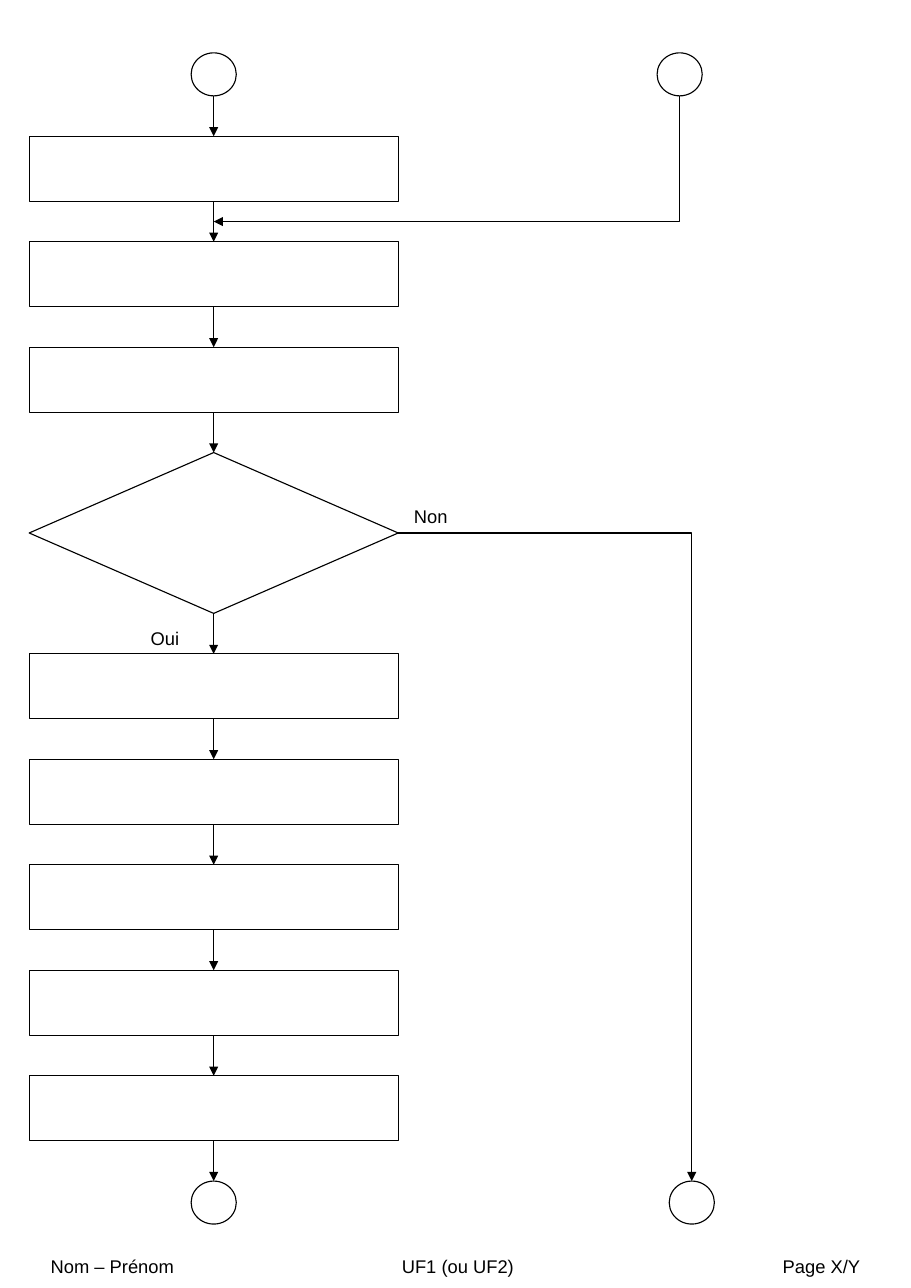
from lxml import etree
from pptx import Presentation
from pptx.dml.color import RGBColor
from pptx.enum.shapes import MSO_CONNECTOR, MSO_SHAPE
from pptx.enum.text import MSO_ANCHOR
from pptx.oxml.ns import qn
from pptx.util import Inches, Pt

STEP = MSO_SHAPE.RECTANGLE
DECISION = MSO_SHAPE.FLOWCHART_DECISION
CIRCLE = MSO_SHAPE.FLOWCHART_CONNECTOR
STRAIGHT, ELBOW = MSO_CONNECTOR.STRAIGHT, MSO_CONNECTOR.ELBOW
MIDDLE, TOP = MSO_ANCHOR.MIDDLE, MSO_ANCHOR.TOP

# Content: the main column from top to bottom, then labels and footer
COLUMN = [CIRCLE] + [STEP] * 3 + [DECISION] + [STEP] * 5 + [CIRCLE]
LABELS = [("Non", 3.66, 4.54, 0.74), ("Oui", 1.27, 5.64, 0.5)]
FOOTER = "Nom – Prénom \tUF1 (ou UF2) \tPage X/Y"
FOOTER_TABS = [(0, "l"), (3.72, "ctr"), (7.35, "r")]

# Sizes as width, height in inches
SIZES = {CIRCLE: (0.41, 0.39), STEP: (3.35, 0.59), DECISION: (3.35, 1.46)}
COLUMN_TOP, COLUMN_BOTTOM = 0.48, 11.11
CENTER = 1.94
ENTRY_X, EXIT_X = 6.17, 6.28
COLORS = {"line": "000000", "fill": "FFFFFF", "text": "000000"}

presentation = Presentation()
presentation.slide_width, presentation.slide_height = Inches(8.27), Inches(11.69)
slide = presentation.slides.add_slide(presentation.slide_layouts[6])


def color(name):
    return RGBColor.from_string(COLORS[name])


def add_node(kind, center, top):
    width, height = SIZES[kind]
    shape = slide.shapes.add_shape(kind, Inches(center - width / 2), Inches(top),
                                   Inches(width), Inches(height))
    shape.shadow.inherit = False
    shape.fill.solid()
    shape.fill.fore_color.rgb = color("fill")
    shape.line.color.rgb = color("line")
    shape.line.width = Pt(0.75)


def add_arrow(start, end, kind=STRAIGHT):
    connector = slide.shapes.add_connector(kind, *map(Inches, start + end))
    connector.line.color.rgb = color("line")
    connector.line.width = Pt(0.75)
    properties = connector._element.spPr
    line = properties.find(qn("a:ln"))
    etree.SubElement(line, qn("a:tailEnd"), type="triangle")
    etree.SubElement(properties, qn("a:effectLst"))
    return properties


def add_bent_arrow(start, end, down_first=False):
    """One-corner arrow; a quarter turn makes it leave downwards, then go left."""
    if down_first:
        middle_x, middle_y = (start[0] + end[0]) / 2, (start[1] + end[1]) / 2
        half_width, half_height = (end[1] - start[1]) / 2, (start[0] - end[0]) / 2
        start = (middle_x - half_width, middle_y - half_height)
        end = (middle_x + half_width, middle_y + half_height)
    properties = add_arrow(start, end, ELBOW)
    properties.find(qn("a:prstGeom")).set("prst", "bentConnector2")
    if down_first:
        properties.find(qn("a:xfrm")).set("rot", "5400000")


def add_text(text, left, top, width, height, size=12, font="Arial", anchor=TOP,
             margins=(0.1, 0.05), space_after=0, tabs=()):
    box = slide.shapes.add_textbox(*map(Inches, (left, top, width, height)))
    frame = box.text_frame
    frame.word_wrap = True
    frame.vertical_anchor = anchor
    frame.margin_left = frame.margin_right = Inches(margins[0])
    frame.margin_top = frame.margin_bottom = Inches(margins[1])
    paragraph = frame.paragraphs[0]
    paragraph.space_after = Pt(space_after)
    run = paragraph.add_run()
    run.text = text
    run.font.size, run.font.name = Pt(size), font
    run.font.color.rgb = color("text")
    if tabs:
        tab_list = etree.SubElement(paragraph._p.get_or_add_pPr(), qn("a:tabLst"))
        for position, alignment in tabs:
            etree.SubElement(tab_list, qn("a:tab"), pos=str(Inches(position)), algn=alignment)


# Main column: equal gaps, an arrow in each
heights = [SIZES[kind][1] for kind in COLUMN]
gap = (COLUMN_BOTTOM - COLUMN_TOP - sum(heights)) / (len(COLUMN) - 1)
tops = [COLUMN_TOP + sum(heights[:i]) + i * gap for i in range(len(COLUMN))]
for kind, top in zip(COLUMN, tops):
    add_node(kind, CENTER, top)
for top in tops[1:]:
    add_arrow((CENTER, top - gap), (CENTER, top))

# Side entry joins below the first step
add_node(CIRCLE, ENTRY_X, tops[0])
add_bent_arrow((ENTRY_X, tops[0] + heights[0]), (CENTER, tops[2] - gap / 2), down_first=True)

# Side exit leaves the decision on the right
decision = COLUMN.index(DECISION)
add_node(CIRCLE, EXIT_X, tops[-1])
add_bent_arrow((CENTER + SIZES[DECISION][0] / 2, tops[decision] + heights[decision] / 2),
               (EXIT_X, tops[-1]))

# Branch labels and footer
for text, left, top, width in LABELS:
    add_text(text, left, top, width, 0.25, space_after=10)
add_text(FOOTER, 0.35, 11.28, 7.72, 0.42, anchor=MIDDLE, margins=(0.11, 0.06), tabs=FOOTER_TABS)

presentation.save("out.pptx")
